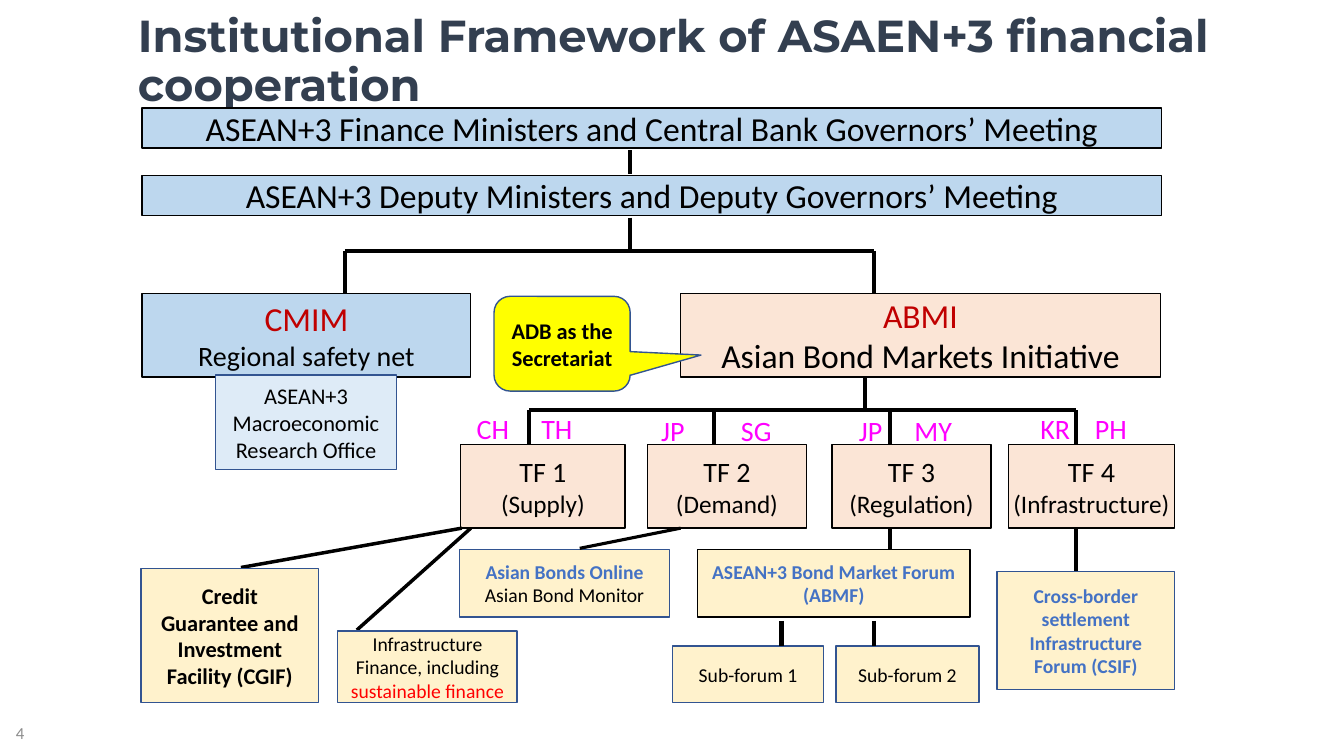
from dataclasses import dataclass

from lxml.etree import SubElement
from pptx import Presentation
from pptx.dml.color import RGBColor as Rgb
from pptx.enum.shapes import MSO_CONNECTOR as Link, MSO_SHAPE as Shape
from pptx.enum.text import MSO_ANCHOR as Anchor, PP_ALIGN as Align
from pptx.oxml.ns import qn
from pptx.util import Inches, Pt


@dataclass(frozen=True)
class Theme:
    """Fonts, colours and type sizes of the slide."""
    heading_font: str = "Montserrat"
    body_font: str = "Calibri"
    heading: str = "333F50"
    ink: str = "000000"
    accent: str = "C00000"
    highlight: str = "FF0000"
    forum: str = "4472C4"
    country: str = "FF00FF"
    muted: str = "8C8C8C"
    outline: str = "325491"
    blue: str = "BDD7EE"
    pale_blue: str = "DEEBF7"
    peach: str = "FBE5D6"
    cream: str = "FFF2CC"
    yellow: str = "FFFF00"
    title_size: int = 32
    large: int = 24
    medium: int = 20
    label: int = 18
    note: int = 16
    small: int = 14
    tiny: int = 12


@dataclass(frozen=True)
class Row:
    """One paragraph, with an optional coloured ending."""
    text: str
    size: int
    color: str = Theme.ink
    bold: bool = False
    ending: str = ""
    ending_color: str = Theme.highlight


class Chart:
    """Draws the parts of an organisation chart on one slide."""

    def __init__(self, page, theme):
        self.page = page
        self.theme = theme

    def set_rows(self, frame, rows, align, font=None, wrap=True):
        """Fill a text frame with rows."""
        frame.word_wrap = wrap
        for index, row in enumerate(rows):
            para = frame.add_paragraph() if index else frame.paragraphs[0]
            para.alignment = align
            para.font.name = font or self.theme.body_font
            para.font.size = Pt(row.size)
            para.font.bold = row.bold
            para.font.color.rgb = Rgb.from_string(row.color)
            para.add_run().text = row.text
            if row.ending:
                span = para.add_run()
                span.text = row.ending
                span.font.color.rgb = Rgb.from_string(row.ending_color)

    def box(self, place, fill, rows, outline=None, wrap=True, kind=Shape.RECTANGLE):
        """Add a filled shape with centred rows."""
        shape = self.page.shapes.add_shape(kind, *map(Inches, place))
        shape.shadow.inherit = False
        shape.fill.solid()
        shape.fill.fore_color.rgb = Rgb.from_string(fill)
        shape.line.color.rgb = Rgb.from_string(outline or self.theme.outline)
        shape.line.width = Pt(1)
        shape.text_frame.vertical_anchor = Anchor.MIDDLE
        self.set_rows(shape.text_frame, rows, Align.CENTER, wrap=wrap)
        return shape

    def body(self, place, fill, rows):
        """Add a black-edged box whose rows do not wrap."""
        return self.box(place, fill, rows, self.theme.ink, wrap=False)

    def callout(self, place, fill, rows, tip):
        """Add a rounded callout pointing at tip."""
        shape = self.box(place, fill, rows, kind=Shape.ROUNDED_RECTANGULAR_CALLOUT)
        for index, value in enumerate(tip):
            shape.adjustments[index] = value

    def text(self, place, row, font=None, anchor=Anchor.TOP, spacing=None):
        """Add a plain text box."""
        frame = self.page.shapes.add_textbox(*map(Inches, place)).text_frame
        frame.vertical_anchor = anchor
        self.set_rows(frame, [row], Align.LEFT, font)
        frame.paragraphs[0].line_spacing = spacing

    def line(self, start, end, width=3):
        """Add a straight black line."""
        link = self.page.shapes.add_connector(
            Link.STRAIGHT, *map(Inches, (*start, *end)))
        link.line.color.rgb = Rgb.from_string(self.theme.ink)
        link.line.width = Pt(width)
        SubElement(link._element.spPr, qn("a:effectLst"))

    def drops(self, columns, top, bottom):
        """Add vertical lines between two heights."""
        for column in columns:
            self.line((column, top), (column, bottom))


def main():
    """Build and save the slide."""
    theme = Theme()
    deck = Presentation()
    deck.slide_width, deck.slide_height = Inches(13.33), Inches(7.5)
    page = deck.slides.add_slide(deck.slide_layouts[6])
    chart = Chart(page, theme)

    chart.line((4.67, 5.24), (3.54, 6.25), 2.5)
    chart.drops([8.83], 5.24, 5.49)
    chart.line((10.67, 5.24), (10.67, 5.66), 2.75)
    chart.text((1.27, 0.33, 11.63, 0.58),
               Row("Institutional Framework of ASAEN+3 financial cooperation",
                   theme.title_size, theme.heading, True),
               theme.heading_font, Anchor.MIDDLE, 0.9)

    meetings = ["ASEAN+3 Finance Ministers and Central Bank Governors’ Meeting",
                "ASEAN+3 Deputy Ministers and Deputy Governors’ Meeting"]
    for index, meeting in enumerate(meetings):
        chart.body((1.41, 1.07 + 0.67 * index, 10.11, 0.4), theme.blue,
                   [Row(meeting, theme.large)])
    chart.body((1.41, 2.91, 3.26, 0.83), theme.blue,
               [Row("CMIM", theme.large, theme.accent),
                Row("Regional safety net", theme.medium)])
    chart.body((6.75, 2.91, 4.76, 0.83), theme.peach,
               [Row("ABMI", theme.large, theme.accent),
                Row("Asian Bond Markets Initiative", theme.large)])
    task_forces = [(4.57, 1.63, "Supply"), (6.42, 1.58, "Demand"),
                   (8.25, 1.58, "Regulation"), (10, 1.65, "Infrastructure")]
    for number, (left, width, topic) in enumerate(task_forces, 1):
        chart.body((left, 4.41, width, 0.83), theme.peach,
                   [Row(f"TF {number}", theme.medium),
                    Row(f"({topic})", theme.label)])

    chart.drops([6.25], 1.49, 1.73)
    chart.drops([6.25], 2.16, 2.49)
    chart.line((3.42, 2.49), (8.67, 2.49))
    chart.drops([3.42, 8.67], 2.49, 2.91)
    chart.drops([8.58], 3.74, 4.07)
    chart.line((5.25, 4.07), (10.67, 4.07))
    chart.drops([5.25, 7.08, 8.83, 10.67], 4.07, 4.41)

    chart.box((6.92, 5.45, 2.7, 0.67), theme.cream,
              [Row("ASEAN+3 Bond Market Forum (ABMF)", theme.small, theme.forum, True)],
              theme.ink)
    chart.box((9.89, 5.67, 1.76, 1.17), theme.cream,
              [Row("Cross-border settlement Infrastructure Forum (CSIF)",
                   theme.small, theme.forum, True)])
    for number, (left, width) in enumerate([(6.67, 1.5), (8.29, 1.42)], 1):
        chart.box((left, 6.41, width, 0.56), theme.cream,
                  [Row(f"Sub-forum {number}", theme.small)])
    chart.drops([7.75, 8.67], 6.16, 6.41)
    chart.box((4.56, 5.45, 2.08, 0.67), theme.cream,
              [Row("Asian Bonds Online", theme.small, theme.forum, True),
               Row("Asian Bond Monitor", theme.small)])
    chart.line((5.75, 5.44), (6.75, 5.24), 2.25)
    chart.line((2.39, 5.63), (4.58, 5.24), 2.5)
    chart.box((2.14, 3.72, 1.79, 0.94), theme.pale_blue,
              [Row("ASEAN+3 Macroeconomic Research Office", theme.note)])
    chart.box((3.35, 6.26, 1.78, 0.71), theme.cream,
              [Row("Infrastructure Finance, including ", theme.small,
                   ending="sustainable finance")])
    chart.text((0.06, 7.07, 2.33, 0.4), Row("4", theme.tiny, theme.muted),
               anchor=Anchor.MIDDLE)

    countries = [(4.63, 4.03, "CH"), (5.27, 4.03, "TH"), (6.46, 4.05, "JP"),
                 (7.25, 4.05, "SG"), (8.42, 4.05, "JP"), (8.97, 4.05, "MY"),
                 (10.22, 4.03, "KR"), (10.76, 4.03, "PH")]
    for left, top, code in countries:
        chart.text((left, top, 0.65, 0.44), Row(code, theme.medium, theme.country))

    chart.box((1.4, 5.64, 1.76, 1.33), theme.cream,
              [Row("Credit Guarantee and Investment Facility (CGIF)",
                   theme.note, bold=True)])
    chart.callout((4.9, 2.94, 1.35, 0.94), theme.yellow,
                  [Row("ADB as the Secretariat", theme.note, bold=True)],
                  (1.02, 0.12, 0.17))
    deck.save("out.pptx")


if __name__ == "__main__":
    main()
